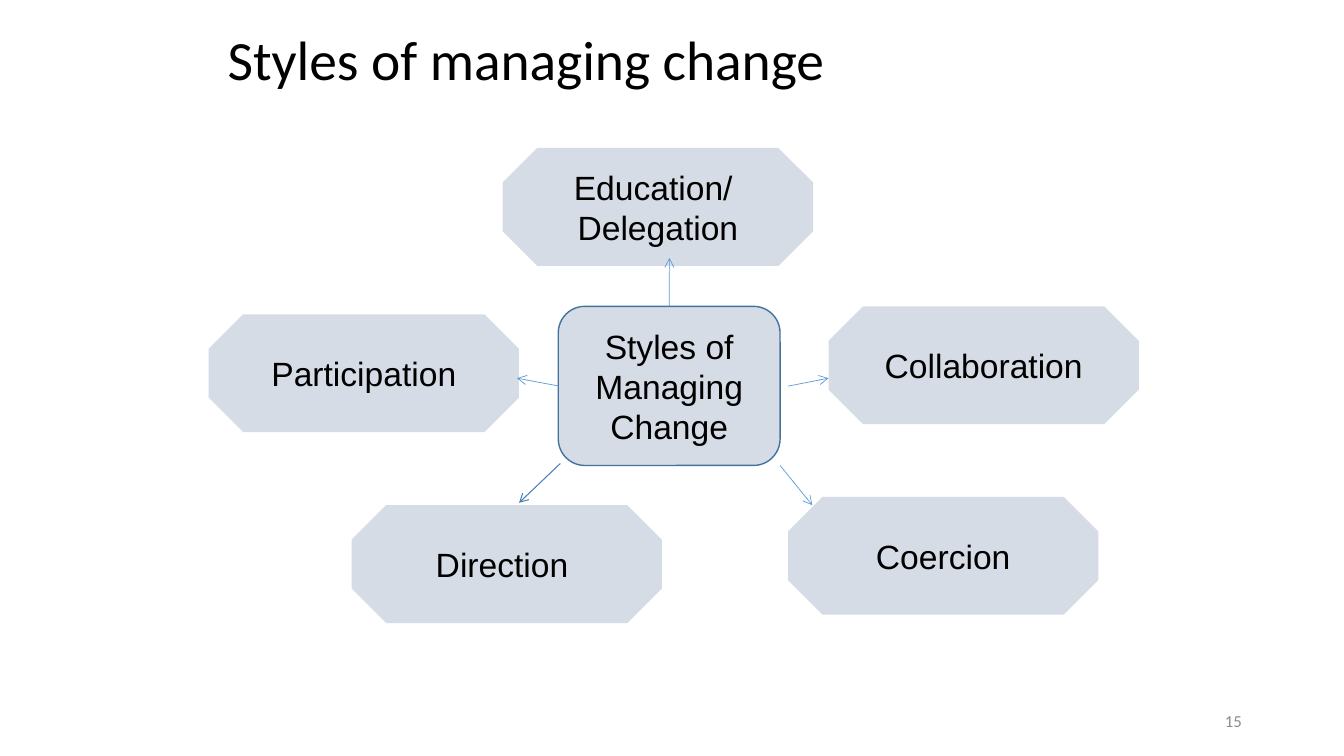
from lxml import etree
from pptx import Presentation
from pptx.dml.color import RGBColor
from pptx.enum.shapes import MSO_CONNECTOR, MSO_SHAPE
from pptx.enum.text import MSO_ANCHOR, PP_ALIGN
from pptx.oxml.ns import qn
from pptx.util import Cm, Pt

OCTAGON, ROUNDED = MSO_SHAPE.OCTAGON, MSO_SHAPE.ROUNDED_RECTANGLE
STRAIGHT = MSO_CONNECTOR.STRAIGHT
MIDDLE = MSO_ANCHOR.MIDDLE
LEFT, CENTER, RIGHT = PP_ALIGN.LEFT, PP_ALIGN.CENTER, PP_ALIGN.RIGHT
TOP_SIDE, LEFT_SIDE = 0, 1

COLORS = {
    "text": "000000",
    "number": "8C8C8C",
    "box": "D6DCE5",
    "hub_line": "43739E",
    "arrow": "5B9BD5",
    "dark_arrow": "4A7EBB",
}

STYLE_W, STYLE_H = 7.82, 2.97
STYLES = [  # left, top, lines
    (12.67, 3.73, ["Education/ ", "Delegation"]),
    (5.26, 7.92, ["Participation"]),
    (20.88, 7.72, ["Collaboration"]),
    (8.86, 12.73, ["Direction "]),
    (19.86, 12.52, ["Coercion"]),
]
ARROWS = [  # start, end, color, width, side of the hub it is joined to
    ((19.86, 9.73), (20.88, 9.53), "arrow", 0.5, None),
    ((19.66, 11.73), (20.47, 12.73), "arrow", 0.5, None),
    ((14.07, 9.73), (13.03, 9.53), "arrow", 0.5, LEFT_SIDE),
    ((14.12, 11.68), (13.08, 12.67), "dark_arrow", 0.75, None),
    ((16.87, 7.72), (16.87, 6.5), "arrow", 0.5, TOP_SIDE),
]


def rgb(name):
    return RGBColor.from_string(COLORS[name])


def write(tf, lines, size, font, color, align, wrap=True, spacing=None):
    tf.word_wrap = wrap
    tf.vertical_anchor = MIDDLE
    for i, line in enumerate(lines):
        p = tf.add_paragraph() if i else tf.paragraphs[0]
        p.alignment = align
        p.line_spacing = spacing
        r = p.add_run()
        r.text = line
        r.font.size = Pt(size)
        r.font.name = font
        r.font.color.rgb = rgb(color)


def add_text(s, left, top, width, height, text, size, color, align, spacing=None):
    sp = s.shapes.add_textbox(Cm(left), Cm(top), Cm(width), Cm(height))
    write(sp.text_frame, [text], size, "Calibri", color, align, spacing=spacing)


def add_box(s, kind, left, top, width, height, lines, wrap, line=None):
    sp = s.shapes.add_shape(kind, Cm(left), Cm(top), Cm(width), Cm(height))
    sp.shadow.inherit = False
    sp.fill.solid()
    sp.fill.fore_color.rgb = rgb("box")
    if line:
        sp.line.color.rgb = rgb(line)
        sp.line.width = Pt(1)
    else:
        sp.line.fill.background()
    write(sp.text_frame, lines, 24, "Arial", "text", CENTER, wrap)
    return sp


def add_arrow(s, hub, start, end, color, width, side):
    c = s.shapes.add_connector(STRAIGHT, *map(Cm, start + end))
    if side is not None:
        c.begin_connect(hub, side)
    c.line.color.rgb = rgb(color)
    c.line.width = Pt(width)
    etree.SubElement(c.line._get_or_add_ln(), qn("a:tailEnd"), type="arrow")
    etree.SubElement(c._element.spPr, qn("a:effectLst"))


def main():
    prs = Presentation()
    prs.slide_width, prs.slide_height = Cm(33.87), Cm(19.05)
    s = prs.slides.add_slide(prs.slide_layouts[6])

    # Title
    add_text(s, 5.49, 0.69, 22.86, 1.78, "Styles of managing change",
             39.6, "text", LEFT, 0.9)

    # Styles around the hub
    for left, top, lines in STYLES:
        sp = add_box(s, OCTAGON, left, top, STYLE_W, STYLE_H, lines, False)
        sp.adjustments[0] = 0.293
    hub = add_box(s, ROUNDED, 14.07, 7.72, 5.59, 4.01,
                  ["Styles of Managing Change"], True, "hub_line")

    # Arrows from the hub to the styles
    for arrow in ARROWS:
        add_arrow(s, hub, *arrow)

    # Slide number
    add_text(s, 23.93, 17.65, 7.62, 1.02, "15", 12, "number", RIGHT)

    prs.save("out.pptx")


if __name__ == "__main__":
    main()
